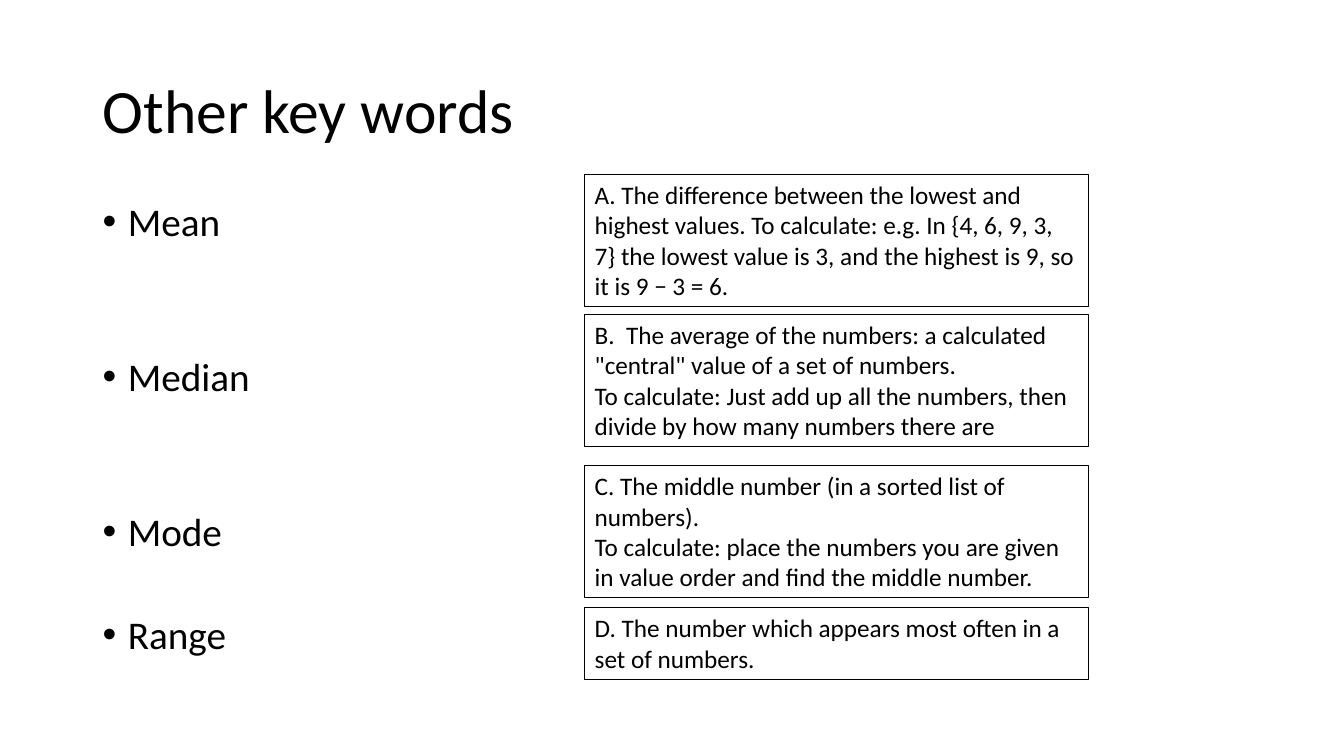
from dataclasses import dataclass

from lxml import etree
from pptx import Presentation
from pptx import util as u
from pptx.dml.color import RGBColor
from pptx.enum import shapes, text
from pptx.oxml import ns

BLACK = "000000"
FONT = "Calibri"
BULLET_INDENT = u.Inches(0.25)
KEYWORD_LINE = 36.9


@dataclass
class Keyword:
    word: str
    rows_skipped: int


@dataclass
class Definition:
    top: float
    height: float
    lines: list[str]


KEYWORDS = [
    Keyword("Mean", 0),
    Keyword("Median", 2),
    Keyword("Mode", 2),
    Keyword("Range", 1),
]

DEFINITIONS = [
    Definition(1.73, 1.31, [
        "A. The difference between the lowest and highest values. To calculate: "
        "e.g. In {4, 6, 9, 3, 7} the lowest value is 3, and the highest is 9, "
        "so it is 9 − 3 = 6.",
    ]),
    Definition(3.12, 1.31, [
        'B.  The average of the numbers: a calculated "central" value of a set of numbers.',
        "To calculate: Just add up all the numbers, then divide by how many numbers there are",
    ]),
    Definition(4.62, 1.31, [
        "C. The middle number (in a sorted list of numbers).",
        "To calculate: place the numbers you are given in value order "
        "and find the middle number.",
    ]),
    Definition(6.03, 0.71, [
        "D. The number which appears most often in a set of numbers.",
    ]),
]


def color(value: str) -> RGBColor:
    return RGBColor.from_string(value)


def apply_format(target, values: dict) -> None:
    for attribute, value in values.items():
        setattr(target, attribute, value)


def write_lines(frame, lines: list[str], size: int, line_spacing: float = 1.0) -> None:
    frame.word_wrap = True
    for number, line in enumerate(lines):
        paragraph = frame.paragraphs[0] if number == 0 else frame.add_paragraph()
        apply_format(paragraph, {
            "alignment": text.PP_ALIGN.LEFT,
            "line_spacing": line_spacing,
        })
        run = paragraph.add_run()
        run.text = line
        apply_format(run.font, {"name": FONT, "size": u.Pt(size)})
        run.font.color.rgb = color(BLACK)


def add_bullet(paragraph) -> None:
    properties = paragraph._p.get_or_add_pPr()
    properties.set("marL", str(BULLET_INDENT))
    properties.set("indent", str(-BULLET_INDENT))
    etree.SubElement(properties, ns.qn("a:buFont")).set("typeface", "Arial")
    etree.SubElement(properties, ns.qn("a:buChar")).set("char", "•")


def draw_title(slide, heading: str) -> None:
    title = slide.shapes.add_textbox(
        u.Inches(0.92), u.Inches(0.4), u.Inches(11.5), u.Inches(1.45))
    title.text_frame.vertical_anchor = text.MSO_ANCHOR.MIDDLE
    write_lines(title.text_frame, [heading], 44, 0.9)


def draw_keywords(slide, keywords: list[Keyword]) -> None:
    word_list = slide.shapes.add_textbox(
        u.Inches(0.92), u.Inches(2), u.Inches(5.67), u.Inches(4.76))
    write_lines(word_list.text_frame, [keyword.word for keyword in keywords], 28, 0.8)
    for keyword, paragraph in zip(keywords, word_list.text_frame.paragraphs):
        paragraph.space_before = u.Pt(10 + keyword.rows_skipped * KEYWORD_LINE)
        add_bullet(paragraph)


def draw_definition(slide, definition: Definition) -> None:
    box = slide.shapes.add_shape(
        shapes.MSO_SHAPE.RECTANGLE, u.Inches(5.8), u.Inches(definition.top),
        u.Inches(5), u.Inches(definition.height))
    box.shadow.inherit = False
    box.fill.background()
    box.line.color.rgb = color(BLACK)
    box.line.width = u.Pt(0.75)
    apply_format(box.text_frame, {
        "vertical_anchor": text.MSO_ANCHOR.TOP,
        "auto_size": text.MSO_AUTO_SIZE.SHAPE_TO_FIT_TEXT,
    })
    write_lines(box.text_frame, definition.lines, 18)


def main() -> None:
    deck = Presentation()
    apply_format(deck, {"slide_width": u.Inches(13.33), "slide_height": u.Inches(7.5)})
    slide = deck.slides.add_slide(deck.slide_layouts[6])
    draw_title(slide, "Other key words")
    draw_keywords(slide, KEYWORDS)
    for definition in DEFINITIONS:
        draw_definition(slide, definition)
    deck.save("out.pptx")


if __name__ == "__main__":
    main()
